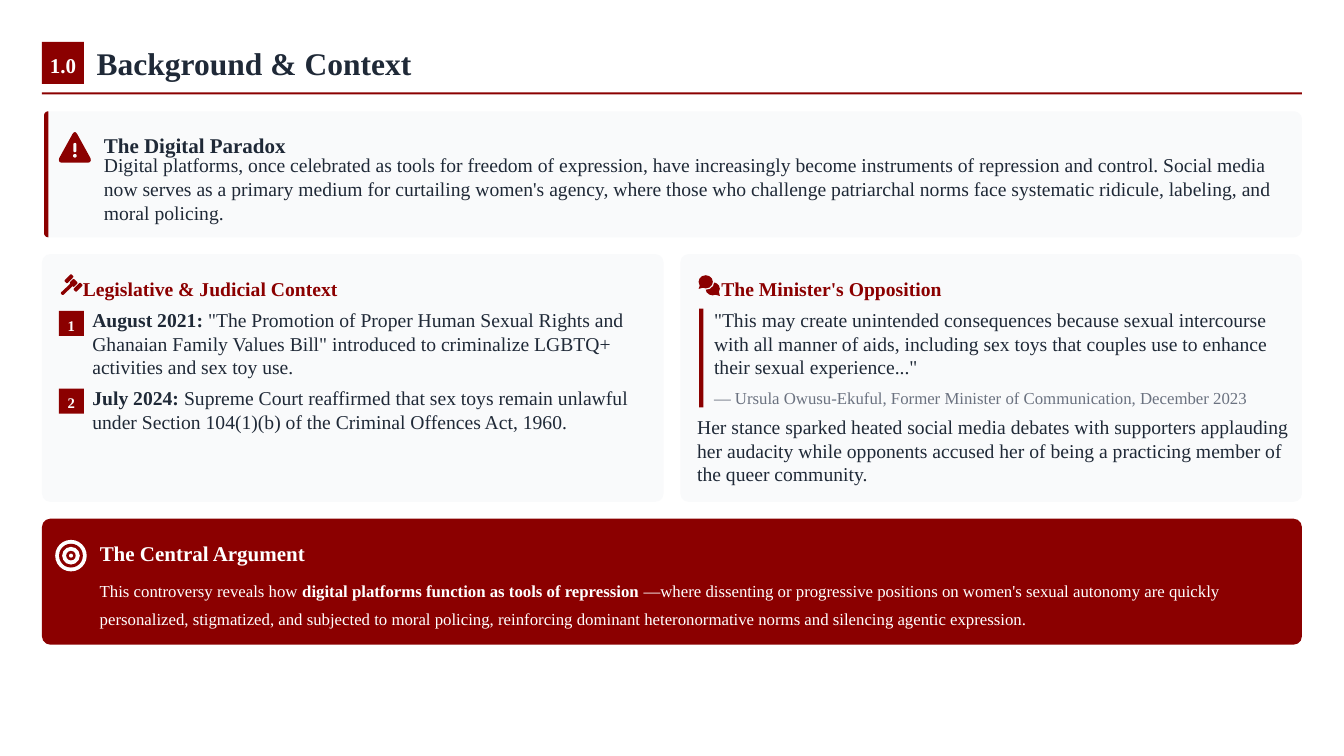
from math import cos, sin, radians
from pptx import Presentation
from pptx.dml.color import RGBColor
from pptx.enum.shapes import MSO_SHAPE
from pptx.enum.text import MSO_ANCHOR, MSO_AUTO_SIZE, PP_ALIGN
from pptx.util import Pt

COLORS = {"red": "8B0000", "ink": "1F2937", "card": "F9FAFB", "gray": "6B7280", "white": "FFFFFF"}
RECT, ROUND, OVAL = MSO_SHAPE.RECTANGLE, MSO_SHAPE.ROUNDED_RECTANGLE, MSO_SHAPE.OVAL
RADIUS = 6

prs = Presentation()
prs.slide_width, prs.slide_height = Pt(960), Pt(540)
slide = prs.slides.add_slide(prs.slide_layouts[5])


def add_shape(kind, x, y, w, h, color, radius=0, rotation=0):
    s = slide.shapes.add_shape(kind, Pt(x), Pt(y), Pt(w), Pt(h))
    s.shadow.inherit = False
    s.fill.solid()
    s.fill.fore_color.rgb = RGBColor.from_string(COLORS[color])
    s.line.fill.background()
    s.rotation = rotation
    if kind == ROUND:
        s.adjustments[0] = radius / min(w, h)


def add_text(x, y, w, h, text, size, color="ink", spacing=None, align=PP_ALIGN.LEFT, s=None):
    """Parts of the text between ** marks are bold."""
    s = s or slide.shapes.add_textbox(0, 0, 0, 0)
    s.left, s.top, s.width, s.height = Pt(x), Pt(y), Pt(w), Pt(h)
    tf = s.text_frame
    frame = {"word_wrap": True, "auto_size": MSO_AUTO_SIZE.NONE, "vertical_anchor": MSO_ANCHOR.MIDDLE,
             "margin_left": 0, "margin_right": 0, "margin_top": 0, "margin_bottom": 0}
    for name, value in frame.items():
        setattr(tf, name, value)
    p = tf.paragraphs[0]
    p.alignment = align
    if spacing:
        p.line_spacing = spacing
    for i, part in enumerate(text.split("**")):
        if part:
            r = p.add_run()
            r.text = part
            for name, value in {"name": "Times New Roman", "size": Pt(size), "bold": i % 2 == 1}.items():
                setattr(r.font, name, value)
            r.font.color.rgb = RGBColor.from_string(COLORS[color])


# Header
add_shape(RECT, 30, 30, 30, 30, "red")
add_text(26.25, 30, 37.5, 30, "**1.0**", 15, "white", 1.2, PP_ALIGN.CENTER)
add_text(69, 31.5, 561.5, 27, "**Background & Context**", 22.5, s=slide.shapes.title)
add_shape(RECT, 30, 66, 900, 1.5, "red")

# Cards
for x in (30, 486):
    add_shape(ROUND, x, 181.5, 444, 177, "card", RADIUS)
add_shape(ROUND, 30, 370.5, 900, 90, "red", RADIUS)

# Gavel icon: two caps, block and handle, by centre
for cx, cy, w, h, angle in ((49.3, 199.1, 7, 2.9, -45), (55.8, 205.2, 7, 2.9, -45),
                            (52.6, 202.1, 4.4, 4.4, 45), (47.8, 206.6, 10.5, 2.4, -43)):
    add_shape(ROUND, cx - w / 2, cy - h / 2, w, h, "red", 0.8, angle)

# Speech bubbles icon: rear bubble, gap, front bubble
add_shape(OVAL, 504, 201.6, 10.2, 9.4, "red")
add_shape(OVAL, 498, 195.6, 12.2, 11.4, "card")
add_shape(OVAL, 499, 196.6, 10.2, 9.4, "red")

# Target icon
for i, radius in enumerate((11.25, 8.5, 6.3, 3.4, 1.4)):
    add_shape(OVAL, 50.7 - radius, 396.9 - radius, 2 * radius, 2 * radius, "red" if i % 2 else "white")

# Paradox card with its edge bar: radii of the left and right corners
outlines = []
top, bottom = 79.5, 169.5
for left, right, r_left, r_right, color in ((31.5, 930, 3, RADIUS, "card"), (31.5, 34.6, 3, 0, "red")):
    corners = ((left + r_left, top + r_left, r_left, 180), (right - r_right, top + r_right, r_right, 270),
               (right - r_right, bottom - r_right, r_right, 0), (left + r_left, bottom - r_left, r_left, 90))
    outlines.append((color, [(cx + r * cos(radians(a + step)), cy + r * sin(radians(a + step)))
                             for cx, cy, r, a in corners for step in range(0, 91, 15)]))

# Warning triangle and bubble tails
half = [(0, 94.3), (0.9, 94.7), (1.7, 95.8), (11.2, 113), (11.4, 114.4), (10.9, 115.7), (9.8, 116.1)]
outlines += [
    ("red", [(53.5 + dx, y) for dx, y in half] + [(53.5 - dx, y) for dx, y in half[::-1]]),
    ("red", [(500.2, 203), (499, 206.4), (503, 205.3)]),
    ("red", [(510.5, 210.4), (514.2, 211.4), (513.4, 207.8)]),
]
for color, points in outlines:
    points = [(Pt(x), Pt(y)) for x, y in points]
    builder = slide.shapes.build_freeform(*points[0], scale=1)
    builder.add_line_segments(points[1:], close=True)
    s = builder.convert_to_shape()
    s.shadow.inherit = False
    s.fill.solid()
    s.fill.fore_color.rgb = RGBColor.from_string(COLORS[color])
    s.line.fill.background()

# Exclamation mark
add_shape(ROUND, 52.4, 102.1, 2.2, 6.7, "card", 1.1)
add_shape(OVAL, 52.2, 110, 2.6, 2.6, "card")

# Paradox text
add_text(74.25, 91.5, 851, 21, "**The Digital Paradox**", 15, spacing=1.2)
add_text(74.25, 112.5, 849.5, 44.5,
         "Digital platforms, once celebrated as tools for freedom of expression, have increasingly become "
         "instruments of repression and control. Social media now serves as a primary medium for curtailing "
         "women's agency, where those who challenge patriarchal norms face systematic ridicule, labeling, "
         "and moral policing.", 14)

# Column headings
for x, heading in ((59.25, "Legislative & Judicial Context"), (515.25, "The Minister's Opposition")):
    add_text(x, 193.5, 410, 21, f"**{heading}**", 14, "red", 1.3)

# Numbered events
events = [
    (220.5, 49.5, "**August 2021:** \"The Promotion of Proper Human Sexual Rights and Ghanaian Family Values "
                  "Bill\" introduced to criminalize LGBTQ+ activities and sex toy use."),
    (276, 33, "**July 2024:** Supreme Court reaffirmed that sex toys remain unlawful under Section 104(1)(b) "
              "of the Criminal Offences Act, 1960."),
]
for number, (y, h, event) in enumerate(events, 1):
    add_shape(RECT, 42, y + 1.5, 18, 18, "red")
    add_text(39.4, y + 1.5, 23, 18, f"**{number}**", 10.5, "white", 1.2, PP_ALIGN.CENTER)
    add_text(66, y, 402, h, event, 14)

# Quotation and reaction
add_shape(RECT, 499.5, 220.5, 3, 70.5, "red")
add_text(510, 220.5, 414, 49.5,
         "\"This may create unintended consequences because sexual intercourse with all manner of aids, "
         "including sex toys that couples use to enhance their sexual experience...\"", 14)
add_text(510, 273, 414, 18, "— Ursula Owusu-Ekuful, Former Minister of Communication, December 2023",
         12, "gray", 1.3)
add_text(498, 297, 426, 49.5,
         "Her stance sparked heated social media debates with supporters applauding her audacity while "
         "opponents accused her of being a practicing member of the queer community.", 14)

# Central argument
add_text(71.25, 382.5, 854, 21, "**The Central Argument**", 15, "white", 1.2)
add_text(71.25, 409.5, 852.5, 39,
         "This controversy reveals how **digital platforms function as tools of repression** —where "
         "dissenting or progressive positions on women's sexual autonomy are quickly personalized, "
         "stigmatized, and subjected to moral policing, reinforcing dominant heteronormative norms and "
         "silencing agentic expression.", 12, "white", 1.4)

prs.save("out.pptx")
